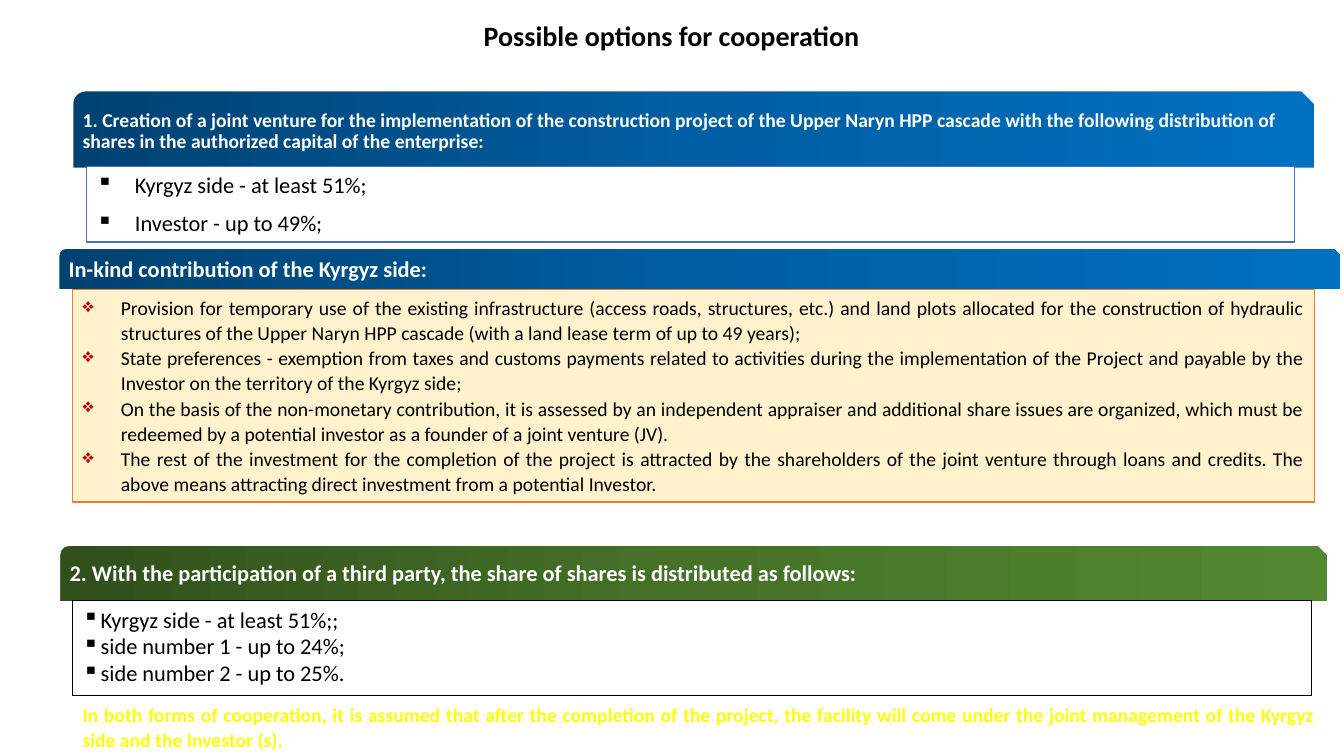
from copy import deepcopy

from lxml import etree
from pptx import Presentation
from pptx.dml.color import RGBColor
from pptx.enum.shapes import MSO_SHAPE
from pptx.enum.text import MSO_ANCHOR, PP_ALIGN
from pptx.oxml.ns import qn
from pptx.util import Inches, Pt

RECTANGLE = MSO_SHAPE.RECTANGLE
SNIP_ROUND = MSO_SHAPE.SNIP_ROUND_RECTANGLE
MIDDLE, TOP = MSO_ANCHOR.MIDDLE, MSO_ANCHOR.TOP
LEFT, CENTER, JUSTIFY = PP_ALIGN.LEFT, PP_ALIGN.CENTER, PP_ALIGN.JUSTIFY

BLACK = RGBColor(0x00, 0x00, 0x00)
WHITE = RGBColor(0xFF, 0xFF, 0xFF)
YELLOW = RGBColor(0xFF, 0xFF, 0x00)
RED = RGBColor(0xC0, 0x00, 0x00)
CREAM = RGBColor(0xFF, 0xF2, 0xCC)
ORANGE = RGBColor(0xED, 0x7D, 0x31)
BLUE = RGBColor(0x44, 0x72, 0xC4)
BLUES = [RGBColor(0x00, 0x42, 0x72), RGBColor(0x00, 0x5E, 0xA2), RGBColor(0x00, 0x70, 0xC0)]
GREENS = [RGBColor(0x31, 0x50, 0x1C), RGBColor(0x46, 0x72, 0x28), RGBColor(0x53, 0x87, 0x30)]


def write_text(shape, lines, size=14, color=BLACK, bold=False, align=LEFT, anchor=TOP,
               spacing=1.0, after=0, margin=None, bullet=None, bullet_color=BLACK, indent=0):
    frame = shape.text_frame
    frame.word_wrap = True
    frame.vertical_anchor = anchor
    if margin is not None:
        frame.margin_left = frame.margin_right = Inches(margin)
        frame.margin_top = frame.margin_bottom = Inches(margin)
    for index, line in enumerate(lines):
        paragraph = frame.add_paragraph() if index else frame.paragraphs[0]
        paragraph.alignment = align
        paragraph.line_spacing = spacing
        paragraph.space_before = Pt(0)
        paragraph.space_after = Pt(after)
        run = paragraph.add_run()
        run.text = line
        run.font.name = "Calibri"
        run.font.size = Pt(size)
        run.font.bold = bold
        run.font.color.rgb = color
        if bullet:
            properties = paragraph._p.get_or_add_pPr()
            properties.set("marL", str(Inches(indent)))
            properties.set("indent", str(-Inches(indent)))
            bullet_fill = etree.SubElement(properties, qn("a:buClr"))
            etree.SubElement(bullet_fill, qn("a:srgbClr")).set("val", str(bullet_color))
            etree.SubElement(properties, qn("a:buChar")).set("char", bullet)


presentation = Presentation()
presentation.slide_width = Inches(13.33)
presentation.slide_height = Inches(7.5)
slide = presentation.slides.add_slide(presentation.slide_layouts[5])

title = slide.shapes.title
title.left, title.top = Inches(3.9), Inches(0.06)
title.width, title.height = Inches(5.52), Inches(0.62)
write_text(title, ["Possible options for cooperation"], size=20, bold=True,
           align=CENTER, anchor=MIDDLE, spacing=0.9)

sections = [
    {
        "banner": (0.72, 0.9, 12.32, 0.77), "gradient": BLUES, "outlined": True,
        "heading": "1. Creation of a joint venture for the implementation of the construction project "
                   "of the Upper Naryn HPP cascade with the following distribution of shares in the "
                   "authorized capital of the enterprise:",
        "heading_box": (0.76, 0.94, 12.22, 0.73), "heading_size": 14, "margin": 0.06,
        "box": (0.86, 1.65, 11.98, 0.75), "fill": WHITE, "line": BLUE,
        "items": ["Kyrgyz side - at least 51%;", "Investor - up to 49%;"],
        "style": {"size": 16, "align": JUSTIFY, "after": 8, "bullet": "▪", "indent": 0.38},
    },
    {
        "banner": (0.59, 2.47, 12.7, 0.4), "gradient": BLUES, "outlined": False,
        "heading": "In-kind contribution of the Kyrgyz side:",
        "heading_box": (0.61, 2.49, 12.65, 0.38), "heading_size": 16, "margin": 0.07,
        "box": (0.72, 2.87, 12.32, 2.11), "fill": CREAM, "line": ORANGE,
        "items": [
            "Provision for temporary use of the existing infrastructure (access roads, structures, "
            "etc.) and land plots allocated for the construction of hydraulic structures of the "
            "Upper Naryn HPP cascade (with a land lease term of up to 49 years);",
            "State preferences - exemption from taxes and customs payments related to activities "
            "during the implementation of the Project and payable by the Investor on the territory "
            "of the Kyrgyz side;",
            "On the basis of the non-monetary contribution, it is assessed by an independent "
            "appraiser and additional share issues are organized, which must be redeemed by a "
            "potential investor as a founder of a joint venture (JV).",
            "The rest of the investment for the completion of the project is attracted by the "
            "shareholders of the joint venture through loans and credits. The above means "
            "attracting direct investment from a potential Investor.",
        ],
        "style": {"size": 14, "align": JUSTIFY, "spacing": 1.07, "bullet": "❖",
                  "bullet_color": RED, "indent": 0.38},
    },
    {
        "banner": (0.59, 5.41, 12.58, 0.56), "gradient": GREENS, "outlined": True,
        "heading": "2. With the participation of a third party, the share of shares is distributed "
                   "as follows:",
        "heading_box": (0.62, 5.43, 12.5, 0.53), "heading_size": 16, "margin": 0.07,
        "box": (0.72, 5.96, 12.29, 0.94), "fill": WHITE, "line": BLACK,
        "items": ["Kyrgyz side - at least 51%;;", "side number 1 - up to 24%;",
                  "side number 2 - up to 25%."],
        "style": {"size": 16, "bullet": "▪", "indent": 0.18},
    },
]

for section in sections:
    banner = slide.shapes.add_shape(SNIP_ROUND, *map(Inches, section["banner"]))
    banner.shadow.inherit = False
    banner.fill.gradient()
    banner.fill.gradient_angle = 0
    first_stop = banner._element.spPr.find(qn("a:gradFill")).find(qn("a:gsLst"))[0]
    first_stop.addnext(deepcopy(first_stop))
    for index, stop in enumerate(banner.fill.gradient_stops):
        stop.position = index / 2
        stop.color.rgb = section["gradient"][index]
    if section["outlined"]:
        banner.line.color.rgb = WHITE
        banner.line.width = Pt(1)
    else:
        banner.line.fill.background()

    heading = slide.shapes.add_textbox(*map(Inches, section["heading_box"]))
    write_text(heading, [section["heading"]], size=section["heading_size"], color=WHITE,
               bold=True, anchor=MIDDLE, spacing=0.9, margin=section["margin"])

    box = slide.shapes.add_shape(RECTANGLE, *map(Inches, section["box"]))
    box.shadow.inherit = False
    box.fill.solid()
    box.fill.fore_color.rgb = section["fill"]
    box.line.color.rgb = section["line"]
    box.line.width = Pt(1)
    write_text(box, section["items"], **section["style"])

conclusion = slide.shapes.add_textbox(Inches(0.72), Inches(6.91), Inches(12.42), Inches(0.59))
write_text(conclusion, [
    "In both forms of cooperation, it is assumed that after the completion of the project, the "
    "facility will come under the joint management of the Kyrgyz side and the Investor (s)."
], color=YELLOW, bold=True, align=JUSTIFY, spacing=1.07)

presentation.save("out.pptx")
